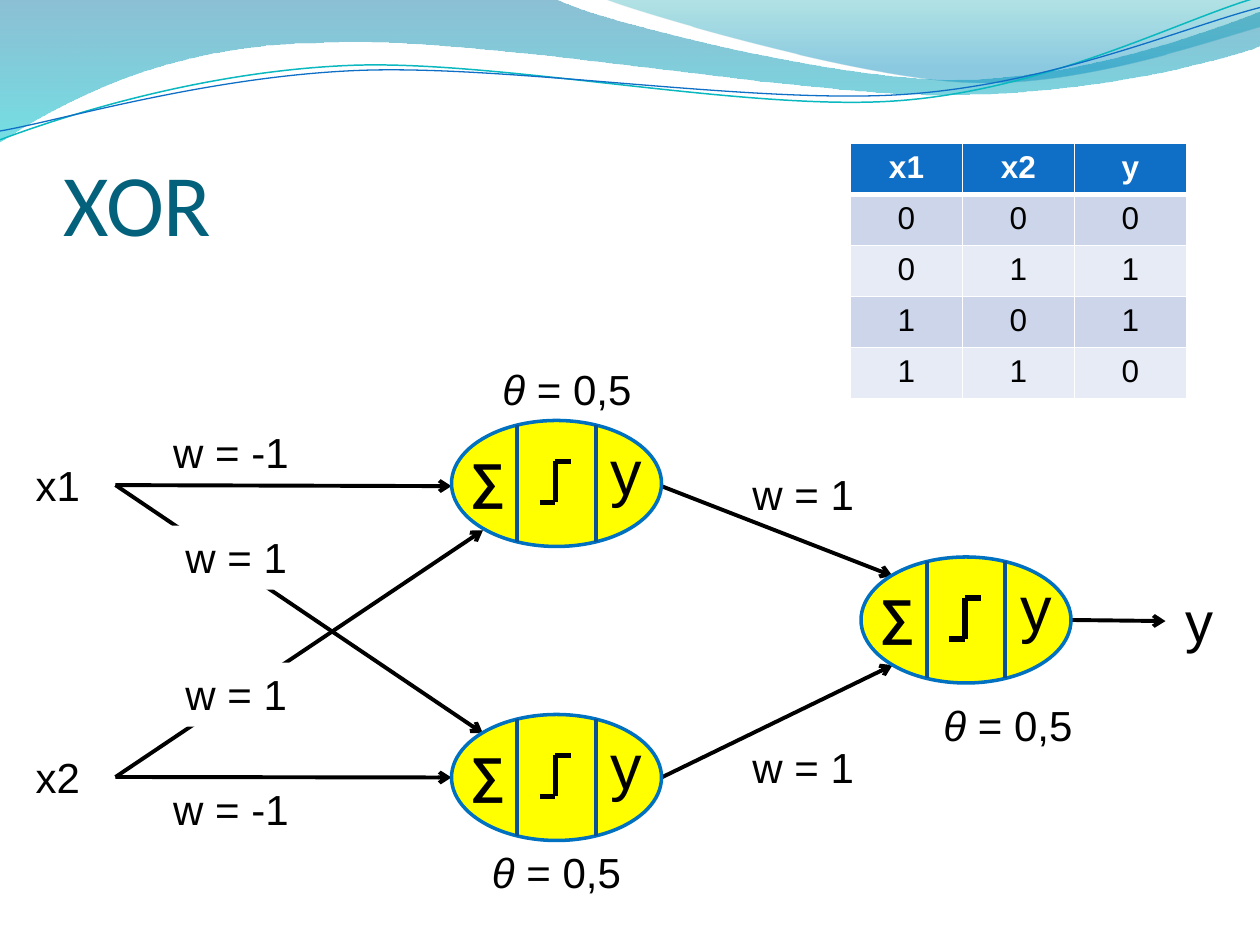
from dataclasses import dataclass

from lxml import etree
from pptx import Presentation
from pptx.dml.color import RGBColor
from pptx.enum.shapes import MSO_CONNECTOR, MSO_SHAPE
from pptx.enum.text import MSO_ANCHOR, MSO_AUTO_SIZE, PP_ALIGN
from pptx.oxml import parse_xml
from pptx.oxml.ns import nsdecls, qn
from pptx.util import Inches, Pt

STRAIGHT = MSO_CONNECTOR.STRAIGHT
ELLIPSE = MSO_SHAPE.OVAL
LEFT, CENTER = PP_ALIGN.LEFT, PP_ALIGN.CENTER
BOTTOM = MSO_ANCHOR.BOTTOM
NO_AUTOFIT = MSO_AUTO_SIZE.NONE


@dataclass
class Theme:
    font: str = "Arial"
    title_font: str = "Calibri"
    title: str = "04617B"
    ink: str = "000000"
    white: str = "FFFFFF"
    neuron: str = "FFFF00"
    outline: str = "0070C0"
    divider: str = "095295"
    header: str = "0F6FC6"
    bands: tuple = ("CCD5EA", "E7EBF5")
    title_size: int = 50
    label_size: int = 24
    output_size: int = 32
    sum_size: int = 28
    neuron_size: int = 36
    table_size: int = 18


theme = Theme()
presentation = Presentation()
presentation.slide_width, presentation.slide_height = Inches(10), Inches(7.5)
slide = presentation.slides.add_slide(presentation.slide_layouts[5])

# The slide is a grid of 120 columns by 90 rows; waves use tenths of its width
cell = presentation.slide_width / 120
tenth = presentation.slide_width / 10


def add_line(shapes, start, end, color, width, arrow=False):
    points = [round(value * cell) for value in (*start, *end)]
    connector = shapes.add_connector(STRAIGHT, *points)
    connector.line.color.rgb = RGBColor.from_string(color)
    connector.line.width = Pt(width)
    properties = connector.element.spPr
    if arrow:
        etree.SubElement(properties.find(qn("a:ln")), qn("a:tailEnd"), type="arrow")
    etree.SubElement(properties, qn("a:effectLst"))


def add_text(shapes, box, runs, size, align=CENTER, bold=False, fill=None):
    shape = shapes.add_textbox(*[round(value * cell) for value in box])
    if fill:
        shape.fill.solid()
        shape.fill.fore_color.rgb = RGBColor.from_string(fill)
    shape.text_frame.word_wrap = True
    paragraph = shape.text_frame.paragraphs[0]
    paragraph.alignment = align
    for text, italic in runs:
        run = paragraph.add_run()
        run.text = text
        run.font.name, run.font.size = theme.font, Pt(size)
        run.font.bold, run.font.italic = bold, italic
        run.font.color.rgb = RGBColor.from_string(theme.ink)


# Waves: start point, then corners (2 numbers) or Bézier curves (6 numbers);
# paint is either gradient stops (position, colour, opacity) or a line
waves = [
    ([(0, -0.01), (4.4, -0.01), (4.76, 0.17, 6.64, 0.63, 7.58, 0.63),
      (8.53, 0.63, 9.58, 0.26, 10, 0.09), (10.01, 0.36),
      (9.83, 0.44, 8.7, 0.76, 7.46, 0.75), (6.22, 0.75, 3.82, 0.28, 2.57, 0.34),
      (1.29, 0.35, 0.46, 0.83, -0.01, 1.13)],
     [(0, "0074A1", 45), (100, "00C6CF", 55)], None),
    ([(4.79, -0.01), (5.09, 0.11, 6.82, 0.62, 7.69, 0.65),
      (8.56, 0.69, 9.61, 0.32, 10, 0.21), (10, 0)],
     [(0, "00A1A9", 30), (80, "008BBF", 45)], None),
    ([(0, 1.11), (0.48, 0.93, 1.58, 0.57, 2.77, 0.52),
      (3.95, 0.47, 5.93, 0.89, 7.13, 0.8), (8.33, 0.71, 9.38, 0.15, 9.98, -0.02)],
     None, ("0AB8BF", 0.85)),
    ([(0, 1.04), (0.47, 0.96, 1.64, 0.61, 2.83, 0.56),
      (4.03, 0.51, 5.97, 0.83, 7.17, 0.75), (8.36, 0.67, 9.41, 0.21, 10, 0.06)],
     None, ("0F6FC6", 0.75)),
]
for (start, *segments), stops, stroke in waves:
    builder = slide.shapes.build_freeform(start[0] * tenth, start[1] * tenth)
    builder.add_line_segments([(segment[-2] * tenth, segment[-1] * tenth)
                               for segment in segments], close=stops is not None)
    wave = builder.convert_to_shape()
    wave.shadow.inherit = False
    properties = wave.element.spPr

    # Bend the straight segments that have control points
    for straight, segment in zip(list(properties.iter(qn("a:lnTo"))), segments):
        if len(segment) == 6:
            curve = etree.Element(qn("a:cubicBezTo"))
            for x, y in zip(segment[::2], segment[1::2]):
                etree.SubElement(curve, qn("a:pt"), x=str(round(x * tenth) - wave.left),
                                 y=str(round(y * tenth) - wave.top))
            straight.getparent().replace(straight, curve)

    wave.fill.background()
    if stops:
        wave.line.fill.background()
        stop_xml = "".join(
            f'<a:gs pos="{position * 1000}"><a:srgbClr val="{color}">'
            f'<a:alpha val="{opacity * 1000}"/></a:srgbClr></a:gs>'
            for position, color, opacity in stops)
        gradient = parse_xml(f'<a:gradFill {nsdecls("a")}><a:gsLst>{stop_xml}</a:gsLst>'
                             '<a:lin ang="5400000" scaled="0"/></a:gradFill>')
        properties.replace(properties.find(qn("a:noFill")), gradient)
    else:
        wave.line.color.rgb = RGBColor.from_string(stroke[0])
        wave.line.width = Pt(stroke[1])

# Title
title = slide.shapes.title
title.left, title.top, title.width, title.height = [
    round(value * cell) for value in (6, 9.2, 109, 15)]
frame = title.text_frame
frame.auto_size, frame.vertical_anchor = NO_AUTOFIT, BOTTOM
frame.margin_left = frame.margin_right = frame.margin_bottom = 0
frame.margin_top = Inches(0.05)
paragraph = frame.paragraphs[0]
paragraph.alignment = LEFT
run = paragraph.add_run()
run.text = "XOR"
run.font.name, run.font.size = theme.title_font, Pt(theme.title_size)
run.font.color.rgb = RGBColor.from_string(theme.title)

# Connections between inputs, neurons and output
x1, x2 = (11, 46.2), (11, 74)
for start, end in [
    (x1, (43, 46.3)), (x1, (46, 69.85)), (x2, (46, 50.5)), (x2, (43, 74.05)),
    ((63, 46.3), (85, 54.85)), ((63, 74.05), (85, 63.35)), ((102, 59.05), (111, 59.15)),
]:
    add_line(slide.shapes, start, end, theme.ink, 2.25, arrow=True)

# Input, weight and output labels
for left, top, width, text, fill in [
    (0, 43.2, 11, "x1", None), (0, 70.95, 11, "x2", None),
    (14, 40, 16, "w = -1", None), (14, 74, 16, "w = -1", None),
    (16, 50.05, 13, "w = 1", theme.white), (16, 63.1, 13, "w = 1", theme.white),
    (70, 44, 13, "w = 1", None), (70, 70.05, 13, "w = 1", None),
]:
    add_text(slide.shapes, (left, top, width, 6.1), [(text, False)],
             theme.label_size, fill=fill)
add_text(slide.shapes, (111, 55.3, 8, 7.7), [("y ", False)], theme.output_size)

# Neurons with their thresholds
for left, top, threshold in [(43, 40.05, (44, 34)), (43, 68.05, (43, 80)),
                             (82, 53.05, (86, 66.05))]:
    add_text(slide.shapes, (*threshold, 20, 6.1),
             [("θ", True), (" = 0,5", False)], theme.label_size)
    parts = slide.shapes.add_group_shape().shapes
    body = parts.add_shape(ELLIPSE, *[round(value * cell) for value in (left, top, 20, 12)])
    body.shadow.inherit = False
    body.fill.solid()
    body.fill.fore_color.rgb = RGBColor.from_string(theme.neuron)
    body.line.color.rgb = RGBColor.from_string(theme.outline)
    body.line.width = Pt(2)
    for x in (6.25, 13.75):
        add_line(parts, (left + x, top + 0.4), (left + x, top + 11.55), theme.divider, 2.25)
    step_points = [(8.4, 7.8), (9.9, 7.8), (9.9, 3.9), (11.4, 3.9)]
    corners = [(left + x, top + y) for x, y in step_points]
    for start, end in zip(corners, corners[1:]):
        add_line(parts, start, end, theme.ink, 3)
    add_text(parts, (left + 0.6, top + 2.15, 2.8, 6.8), [("∑", False)],
             theme.sum_size, LEFT, bold=True)
    add_text(parts, (left + 14, top + 0.55, 2.8, 8.5), [("y", False)],
             theme.neuron_size, LEFT)

# Truth table
rows = [("x1", "x2", "y"), "000", "011", "101", "110"]
table = slide.shapes.add_table(
    5, 3, *[round(value * cell) for value in (81, 13.65, 32, 24.35)]).table
for row, values in enumerate(rows):
    for column, value in enumerate(values):
        table_cell = table.cell(row, column)
        table_cell.fill.solid()
        table_cell.fill.fore_color.rgb = RGBColor.from_string(
            theme.bands[(row - 1) % 2] if row else theme.header)
        paragraph = table_cell.text_frame.paragraphs[0]
        paragraph.alignment = CENTER
        run = paragraph.add_run()
        run.text = value
        run.font.name, run.font.size = theme.font, Pt(theme.table_size)
        run.font.bold = row == 0
        run.font.color.rgb = RGBColor.from_string(theme.ink if row else theme.white)
        for index, side in enumerate("LRTB"):
            width = 3 if (row, side) in [(0, "B"), (1, "T")] else 1
            table_cell._tc.get_or_add_tcPr().insert(index, parse_xml(
                f'<a:ln{side} {nsdecls("a")} w="{Pt(width)}"><a:solidFill>'
                f'<a:srgbClr val="{theme.white}"/></a:solidFill></a:ln{side}>'))

presentation.save("out.pptx")
